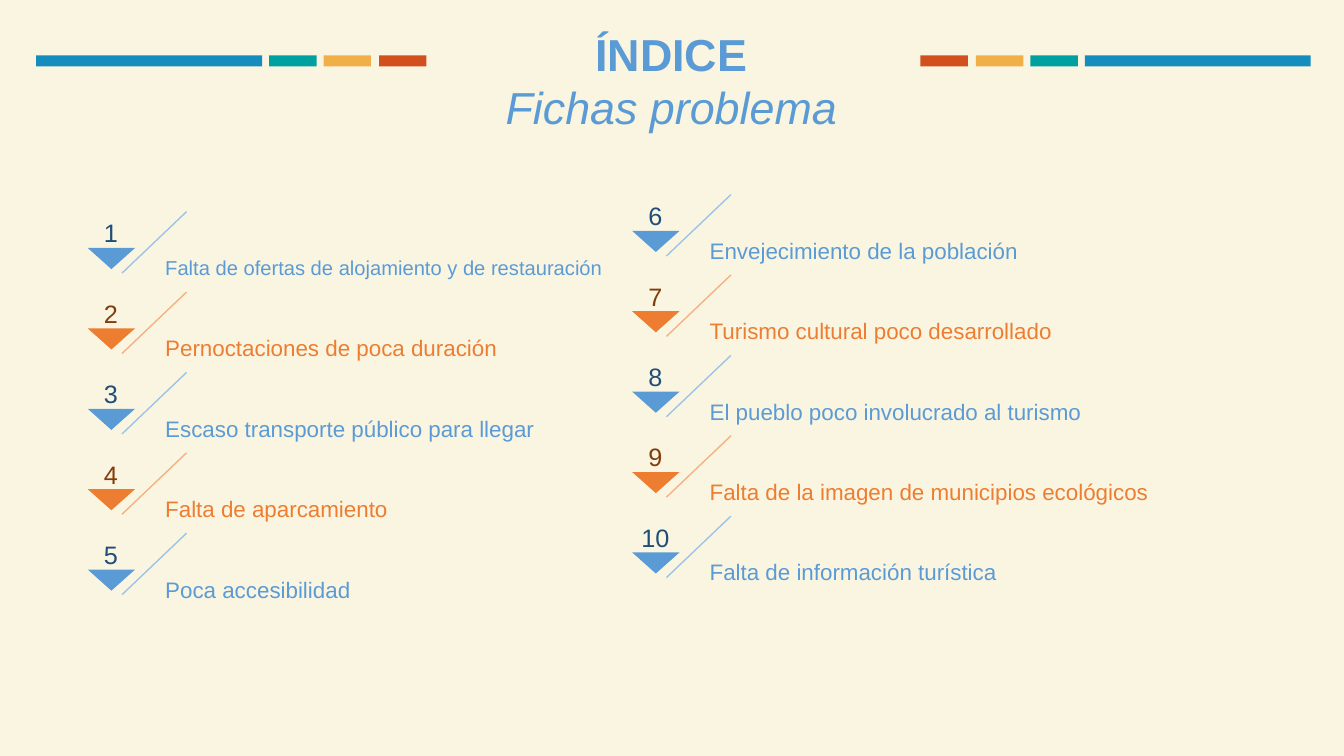
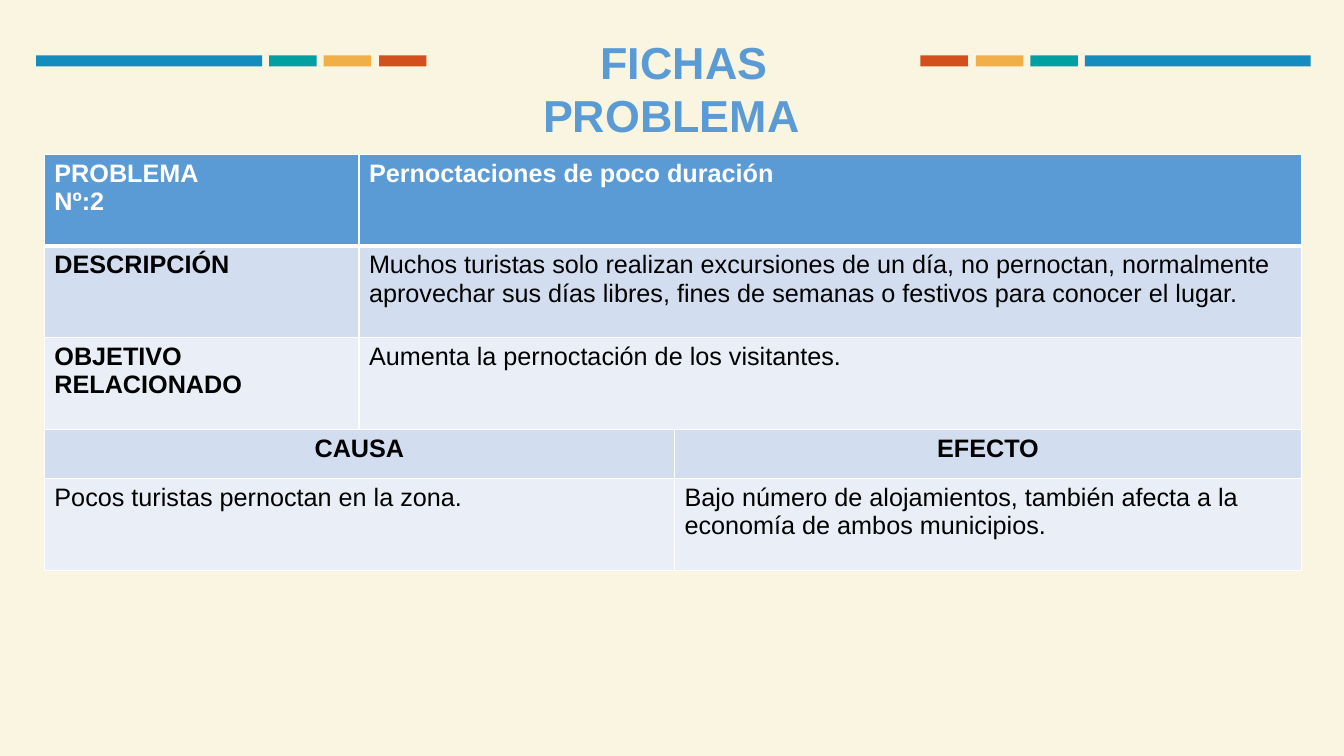
from lxml import etree
from pptx import Presentation
from pptx.dml.color import RGBColor
from pptx.enum.shapes import MSO_CONNECTOR, MSO_SHAPE
from pptx.enum.text import MSO_ANCHOR, MSO_AUTO_SIZE, PP_ALIGN
from pptx.oxml.ns import qn
from pptx.util import Inches, Pt

RECTANGLE = MSO_SHAPE.RECTANGLE
DOWN_TRIANGLE = MSO_SHAPE.FLOWCHART_MERGE
STRAIGHT = MSO_CONNECTOR.STRAIGHT
TOP, MIDDLE, BOTTOM = MSO_ANCHOR.TOP, MSO_ANCHOR.MIDDLE, MSO_ANCHOR.BOTTOM
LEFT, CENTER = PP_ALIGN.LEFT, PP_ALIGN.CENTER
NO_AUTOFIT = MSO_AUTO_SIZE.NONE

FONT = "Arial"
CREAM = RGBColor(0xFA, 0xF5, 0xE1)
BLUE = RGBColor(0x5B, 0x9B, 0xD5)
PALE_BLUE = RGBColor(0x9D, 0xC3, 0xE6)
DARK_BLUE = RGBColor(0x1F, 0x4E, 0x79)
ORANGE = RGBColor(0xED, 0x7D, 0x31)
PALE_ORANGE = RGBColor(0xF4, 0xB1, 0x83)
DARK_ORANGE = RGBColor(0x84, 0x3C, 0x0B)
BAND_BLUE = RGBColor(0x14, 0x8C, 0xBE)
BAND_TEAL = RGBColor(0x00, 0xA0, 0xA0)
BAND_YELLOW = RGBColor(0xF0, 0xAF, 0x47)
BAND_RED = RGBColor(0xD2, 0x50, 0x1E)
ROW_DARK = RGBColor(0xD2, 0xDE, 0xEF)
ROW_LIGHT = RGBColor(0xEA, 0xEF, 0xF7)
WHITE = RGBColor(0xFF, 0xFF, 0xFF)
BLACK = RGBColor(0x00, 0x00, 0x00)

SLIDE_WIDTH = 13.33
BANDS = [
    (0.36, 2.24, BAND_BLUE),
    (2.67, 0.47, BAND_TEAL),
    (3.21, 0.47, BAND_YELLOW),
    (3.76, 0.47, BAND_RED),
]
ITEM_PITCH = 3.19 / 4
ITEM_COLORS = [(BLUE, PALE_BLUE, DARK_BLUE), (ORANGE, PALE_ORANGE, DARK_ORANGE)]
INDEX_COLUMNS = [
    (0.85, 1.97, 1, [
        ("Falta de ofertas de alojamiento y de restauración", 14.4),
        ("Pernoctaciones de poca duración", 16),
        ("Escaso transporte público para llegar", 16),
        ("Falta de aparcamiento", 16),
        ("Poca accesibilidad", 16),
    ]),
    (6.25, 1.8, 6, [
        ("Envejecimiento de la población", 16),
        ("Turismo cultural poco desarrollado", 16),
        ("El pueblo poco involucrado al turismo", 16),
        ("Falta de la imagen de municipios ecológicos", 16),
        ("Falta de información turística", 16),
    ]),
]

COLUMN_WIDTHS = [3.12, 3.13, 6.22]
ROW_HEIGHTS = [0.91, 0.91, 0.91, 0.49, 0.91]
ROW_FILLS = [BLUE, ROW_DARK, ROW_LIGHT, ROW_DARK, ROW_LIGHT]
PROBLEM_CELLS = [
    (0, 0, 0, "PROBLEMA\nNº:2", True, LEFT),
    (0, 1, 2, "Pernoctaciones de poco duración", True, LEFT),
    (1, 0, 0, "DESCRIPCIÓN", True, LEFT),
    (1, 1, 2, "Muchos turistas solo realizan excursiones de un día, no pernoctan, "
     "normalmente aprovechar sus días libres, fines de semanas o festivos "
     "para conocer el lugar.", False, LEFT),
    (2, 0, 0, "OBJETIVO RELACIONADO", True, LEFT),
    (2, 1, 2, "Aumenta la pernoctación de los visitantes.", False, LEFT),
    (3, 0, 1, "CAUSA", True, CENTER),
    (3, 2, 2, "EFECTO", True, CENTER),
    (4, 0, 1, "Pocos turistas pernoctan en la zona.", False, LEFT),
    (4, 2, 2, "Bajo número de alojamientos, también afecta a la economía "
     "de ambos municipios.", False, LEFT),
]


def format_paragraph(paragraph, size, color, bold=False, italic=False, align=LEFT):
    """Apply the deck's font and the given look to a paragraph."""
    paragraph.alignment = align
    font = paragraph.font
    font.name, font.size, font.bold, font.italic = FONT, Pt(size), bold, italic
    font.color.rgb = color


def add_filled(slide, preset, box, color):
    """Add a flat preset shape without outline."""
    shape = slide.shapes.add_shape(preset, *map(Inches, box))
    shape.shadow.inherit = False
    shape.fill.solid()
    shape.fill.fore_color.rgb = color
    shape.line.fill.background()
    return shape


def add_label(slide, box, text, size, color, anchor, align=LEFT, inset=True):
    """Add a one-paragraph text box."""
    frame = slide.shapes.add_textbox(*map(Inches, box)).text_frame
    frame.word_wrap = True
    frame.vertical_anchor = anchor
    if not inset:
        frame.margin_left = frame.margin_right = 0
        frame.margin_top = frame.margin_bottom = 0
    frame.text = text
    format_paragraph(frame.paragraphs[0], size, color, align=align)


def add_slash(slide, start, end, color):
    """Add a thin straight line without shadow."""
    slash = slide.shapes.add_connector(STRAIGHT, *map(Inches, start + end))
    slash.line.color.rgb = color
    slash.line.width = Pt(1)
    etree.SubElement(slash._element.spPr, qn("a:effectLst"))


def style_layout(layout, slide):
    """Give the layout its background and its mirrored colour bands."""
    layout.background.fill.solid()
    layout.background.fill.fore_color.rgb = CREAM
    for left, width, color in BANDS:
        for x in (left, SLIDE_WIDTH + 0.03 - left - width):
            band = add_filled(slide, RECTANGLE, (x, 0.55, width, 0.11), color)
            layout.shapes._spTree.append(band._element)


def set_title(slide, box, lines, anchor, indent=0):
    """Fill the title placeholder; the first line is bold, the others italic."""
    title = slide.shapes.title
    title.left, title.top, title.width, title.height = map(Inches, box)
    frame = title.text_frame
    frame.auto_size = NO_AUTOFIT
    frame.word_wrap = True
    frame.vertical_anchor = anchor
    frame.text = "\n".join(lines)
    for index, paragraph in enumerate(frame.paragraphs):
        format_paragraph(paragraph, 32, BLUE, index == 0, index > 0, CENTER)
        paragraph._p.get_or_add_pPr().set("indent", str(Inches(indent)))


def add_index_item(slide, x, y, number, text, size, colors):
    """Add a numbered marker, its slash and the problem name."""
    main_color, pale, dark = colors
    add_slash(slide, (x + 1, y + 0.13), (x + 0.36, y + 0.74), pale)
    add_filled(slide, DOWN_TRIANGLE, (x + 0.02, y + 0.49, 0.47, 0.21), main_color)
    add_label(slide, (x + 0.69, y + 0.41, 4.88, 0.55), text, size, main_color, MIDDLE)
    add_label(slide, (x, y, 0.5, 0.49), str(number), 18, dark, BOTTOM, CENTER, False)


def set_borders(cell, bottom_width):
    """Draw white borders around a cell."""
    properties = cell._tc.get_or_add_tcPr()
    for side, width in (("L", 1), ("R", 1), ("T", 1), ("B", bottom_width)):
        line = etree.SubElement(properties, qn(f"a:ln{side}"), w=str(Pt(width)))
        fill = etree.SubElement(line, qn("a:solidFill"))
        etree.SubElement(fill, qn("a:srgbClr"), val=str(WHITE))


def add_problem_table(slide):
    """Add the problem sheet as a table with merged cells."""
    table = slide.shapes.add_table(
        len(ROW_HEIGHTS), len(COLUMN_WIDTHS), Inches(0.44), Inches(1.53),
        Inches(sum(COLUMN_WIDTHS)), Inches(sum(ROW_HEIGHTS))).table
    for column, width in zip(table.columns, COLUMN_WIDTHS):
        column.width = Inches(width)
    for index, (row, height) in enumerate(zip(table.rows, ROW_HEIGHTS)):
        row.height = Inches(height)
        for cell in row.cells:
            set_borders(cell, 3 if index == 0 else 1)
            cell.fill.solid()
            cell.fill.fore_color.rgb = ROW_FILLS[index]
    for row, first, last, text, bold, align in PROBLEM_CELLS:
        cell = table.cell(row, first)
        if last > first:
            cell.merge(table.cell(row, last))
        cell.text = text
        for paragraph in cell.text_frame.paragraphs:
            format_paragraph(paragraph, 18, BLACK if row else WHITE, bold, align=align)


def main():
    """Build the index slide and the problem sheet."""
    deck = Presentation()
    deck.slide_width, deck.slide_height = Inches(SLIDE_WIDTH), Inches(7.5)
    layout = deck.slide_layouts[5]

    index_slide = deck.slides.add_slide(layout)
    style_layout(layout, index_slide)
    set_title(index_slide, (2.91, 0.08, 7.5, 1.43), ["ÍNDICE", "Fichas problema"], MIDDLE)
    for x, top, first_number, items in INDEX_COLUMNS:
        for step, (text, size) in enumerate(items):
            add_index_item(index_slide, x, top + step * ITEM_PITCH,
                           first_number + step, text, size, ITEM_COLORS[step % 2])

    problem_slide = deck.slides.add_slide(layout)
    set_title(problem_slide, (4.46, 0.29, 4.4, 1.2), ["FICHAS PROBLEMA"], TOP, 0.25)
    add_problem_table(problem_slide)
    deck.save("out.pptx")


if __name__ == "__main__":
    main()
